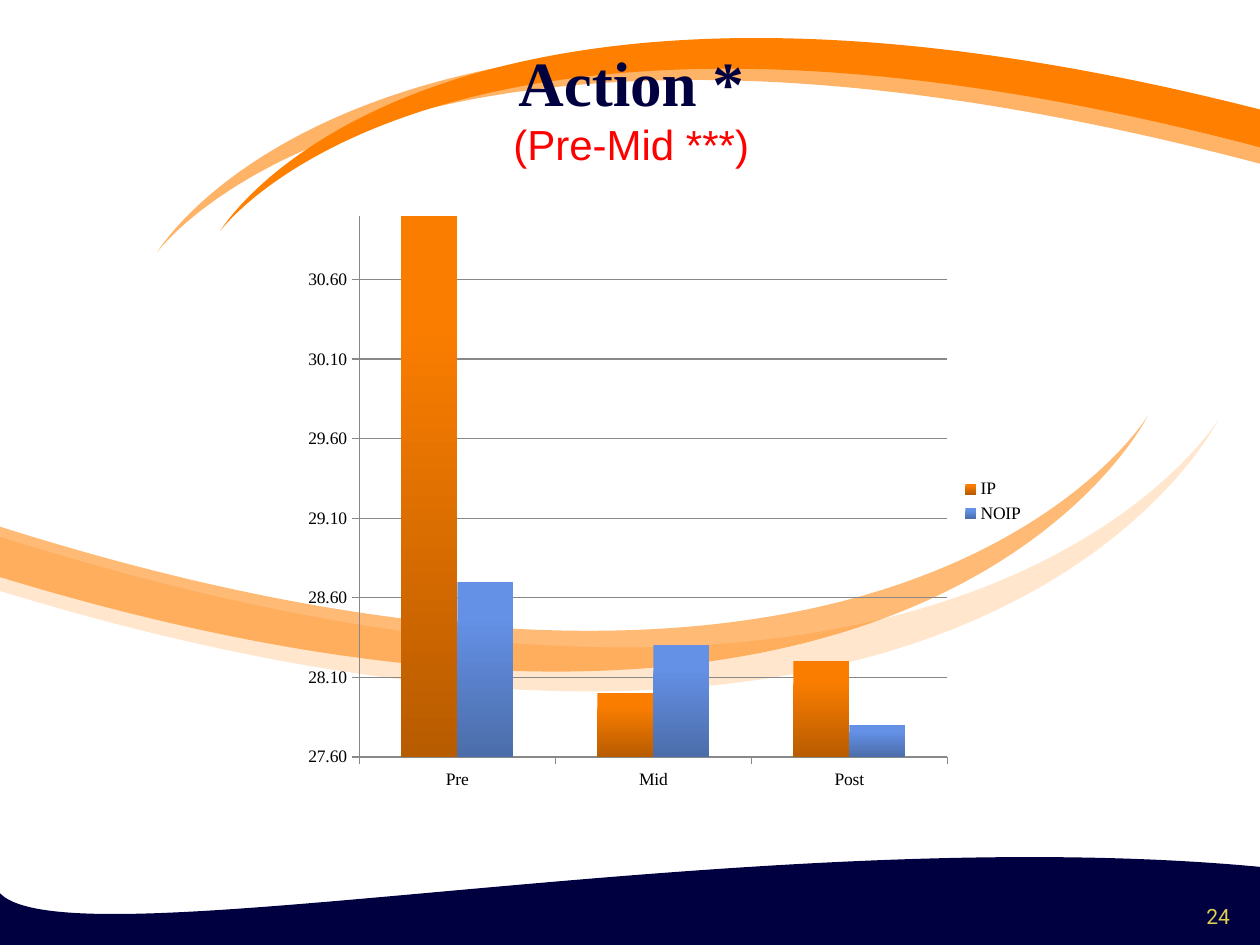
"""Build the Action results slide: swoosh background, title, column chart and page number."""
from dataclasses import dataclass
from typing import Optional

from lxml.etree import SubElement, fromstring
from pptx import Presentation
from pptx.chart.data import CategoryChartData
from pptx.dml.color import RGBColor
from pptx.enum.chart import XL_CHART_TYPE, XL_LEGEND_POSITION, XL_TICK_MARK
from pptx.enum.text import MSO_ANCHOR, MSO_AUTO_SIZE, PP_ALIGN
from pptx.oxml.ns import nsdecls, qn
from pptx.util import Pt

Point = tuple[float, float]


@dataclass(frozen=True)
class TextStyle:
    font: str
    size: int
    color: str
    bold: bool = False


@dataclass(frozen=True)
class Theme:
    navy: str = "000040"
    orange: str = "FF8000"
    light_orange: str = "FFB366"
    pale_orange: str = "FFE6CC"
    axis: str = "888888"
    heading: TextStyle = TextStyle("Times New Roman", 36, "000040", True)
    subheading: TextStyle = TextStyle("Arial", 24, "FF0000")
    number: TextStyle = TextStyle("Roboto", 12, "E1CF50")
    chart: TextStyle = TextStyle("Times New Roman", 10, "000000")


@dataclass(frozen=True)
class Ribbon:
    start: Point
    pull_in: Point
    tip: Point
    pull_out: Point
    end: Point
    shoulder: Point
    color: str
    opacity: Optional[int] = None


@dataclass(frozen=True)
class Series:
    name: str
    values: tuple[float, ...]
    top_color: str
    bottom_color: str


THEME = Theme()
WAVE = (
    (0, 510.5), (40.3, 552.2), (429.1, 468), (720, 495.4),
    (720, 510.5), (720.7, 527), (720.7, 542.9), (0, 540.7),
)
RIBBONS = (
    Ribbon((0, 306.7), (549.4, 481), (696.2, 239.8), (563, 509.8), (0, 337.7), (0, 333.4),
           THEME.pale_orange),
    Ribbon((720, 93.6), (222.5, -38.2), (90, 144), (210.2, -59.8), (720, 69.8), (720, 73.4),
           THEME.light_orange),
    Ribbon((720, 84.2), (251.3, -39.6), (126, 131.8), (239.8, -59.8), (720, 62.6), (720, 65.5),
           THEME.orange),
    Ribbon((0, 301), (518.4, 465.1), (655.9, 237.6), (530.6, 491.8), (0, 329.8), (0, 326.2),
           THEME.orange, 54),
)
CATEGORIES = ("Pre", "Mid", "Post")
SERIES = (
    Series("IP", (31, 28, 28.2), "FA7D00", "B85C00"),
    Series("NOIP", (28.7, 28.3, 27.8), "6490E6", "4B6DA9"),
)
PLOT_LAYOUT = {"x": 0.09, "y": 0.02, "w": 0.79, "h": 0.91}


def draw_outline(slide, points: tuple[Point, ...], curves: int, color: str,
                 opacity: Optional[int] = None) -> None:
    """Draw a closed outline whose leading point triples are Bezier curves."""
    vertices = [(Pt(x), Pt(y)) for x, y in points]
    builder = slide.shapes.build_freeform(*vertices[0], scale=1.0)
    builder.add_line_segments(vertices[1:], close=True)
    shape = builder.convert_to_shape()
    segments = shape.element.findall(".//" + qn("a:lnTo"))
    for first in range(0, 3 * curves, 3):
        triple = segments[first:first + 3]
        bezier = fromstring(f'<a:cubicBezTo {nsdecls("a")}/>')
        triple[0].addprevious(bezier)
        for segment in triple:
            bezier.append(segment[0])
            segment.getparent().remove(segment)
    shape.shadow.inherit = False
    shape.fill.solid()
    shape.fill.fore_color.rgb = RGBColor.from_string(color)
    shape.line.fill.background()
    if opacity is not None:
        fill_color = shape.element.spPr.find(".//" + qn("a:srgbClr"))
        SubElement(fill_color, qn("a:alpha"), val=str(opacity * 1000))


def draw_ribbon(slide, ribbon: Ribbon) -> None:
    """Draw a ribbon whose two edges meet at its tip."""
    points = (
        ribbon.start, ribbon.pull_in, ribbon.tip, ribbon.tip,
        ribbon.tip, ribbon.pull_out, ribbon.end,
        ribbon.end, ribbon.shoulder, ribbon.start,
    )
    draw_outline(slide, points, 3, ribbon.color, ribbon.opacity)


def apply_style(font, style: TextStyle) -> None:
    """Give a font its theme style."""
    font.name = style.font
    font.size = Pt(style.size)
    font.bold = style.bold
    font.color.rgb = RGBColor.from_string(style.color)


def write_span(para, text: str, style: TextStyle) -> None:
    """Add one centred, styled run to a paragraph."""
    para.alignment = PP_ALIGN.CENTER
    span = para.add_run()
    span.text = text
    apply_style(span.font, style)


def place_title(slide) -> None:
    """Fill the title placeholder and bring it in front of the ribbons."""
    title = slide.shapes.title
    title.left, title.top, title.width, title.height = Pt(36.7), Pt(37.4), Pt(648), Pt(90)
    frame = title.text_frame
    frame.auto_size = MSO_AUTO_SIZE.NONE
    frame.vertical_anchor = MSO_ANCHOR.MIDDLE
    para = frame.paragraphs[0]
    for text, style in (("Action *", THEME.heading), ("(Pre-Mid ***)", THEME.subheading)):
        write_span(para, text, style)
        para.add_line_break()
        line_end = para.runs[-1].font.size
        SubElement(para._p[-1], qn("a:rPr"), sz=str(int(line_end.pt * 100)))
    SubElement(para._p, qn("a:endParaRPr"), sz=str(THEME.heading.size * 100))
    title.element.getparent().append(title.element)


def draw_page_number(slide) -> None:
    """Write the page number in the lower right corner."""
    box = slide.shapes.add_textbox(Pt(678.2), Pt(496.8), Pt(36), Pt(37.4))
    box.text_frame.word_wrap = True
    box.text_frame.vertical_anchor = MSO_ANCHOR.BOTTOM
    write_span(box.text_frame.paragraphs[0], "24", THEME.number)


def style_line(line) -> None:
    """Apply the thin grey chart line."""
    line.color.rgb = RGBColor.from_string(THEME.axis)
    line.width = Pt(0.75)


def draw_chart(slide) -> None:
    """Add the clustered column chart."""
    data = CategoryChartData(number_format="###0.00")
    data.categories = CATEGORIES
    for series in SERIES:
        data.add_series(series.name, series.values)
    chart = slide.shapes.add_chart(
        XL_CHART_TYPE.COLUMN_CLUSTERED, Pt(167), Pt(116.6), Pt(425.5), Pt(339.8), data
    ).chart
    apply_style(chart.font, THEME.chart)
    chart.has_title = False
    chart.has_legend = True
    chart.legend.position = XL_LEGEND_POSITION.RIGHT
    chart.legend.include_in_layout = False
    value_axis = chart.value_axis
    value_axis.minimum_scale, value_axis.maximum_scale = 27.6, 31
    value_axis.major_unit = 0.5
    value_axis.has_major_gridlines = True
    value_axis.tick_labels.number_format = "###0.00"
    value_axis.tick_labels.number_format_is_linked = False
    style_line(value_axis.major_gridlines.format.line)
    for axis in (chart.category_axis, value_axis):
        axis.major_tick_mark = XL_TICK_MARK.OUTSIDE
        style_line(axis.format.line)
    plot = chart.plots[0]
    plot.gap_width, plot.overlap = 150, 0
    plot.vary_by_categories = False
    for drawn, series in zip(plot.series, SERIES):
        fill = drawn.format.fill
        fill.gradient()
        fill.gradient_angle = 270
        stops = zip(fill.gradient_stops, (series.top_color, series.bottom_color), (0.2, 1))
        for stop, color, position in stops:
            stop.color.rgb = RGBColor.from_string(color)
            stop.position = position
    area = chart.element.find(".//" + qn("c:plotArea"))
    for old in area.findall(qn("c:layout")):
        area.remove(old)
    modes = '<c:layoutTarget val="inner"/><c:xMode val="edge"/><c:yMode val="edge"/>'
    sizes = "".join(f'<c:{key} val="{value}"/>' for key, value in PLOT_LAYOUT.items())
    area.insert(0, fromstring(
        f'<c:layout {nsdecls("c")}><c:manualLayout>{modes}{sizes}</c:manualLayout></c:layout>'))


def main() -> None:
    """Build and save the deck."""
    deck = Presentation()
    deck.slide_width, deck.slide_height = Pt(720), Pt(540)
    page = deck.slides.add_slide(deck.slide_layouts[5])
    draw_outline(page, WAVE, 2, THEME.navy)
    for ribbon in RIBBONS:
        draw_ribbon(page, ribbon)
    place_title(page)
    draw_page_number(page)
    draw_chart(page)
    deck.save("out.pptx")


if __name__ == "__main__":
    main()
